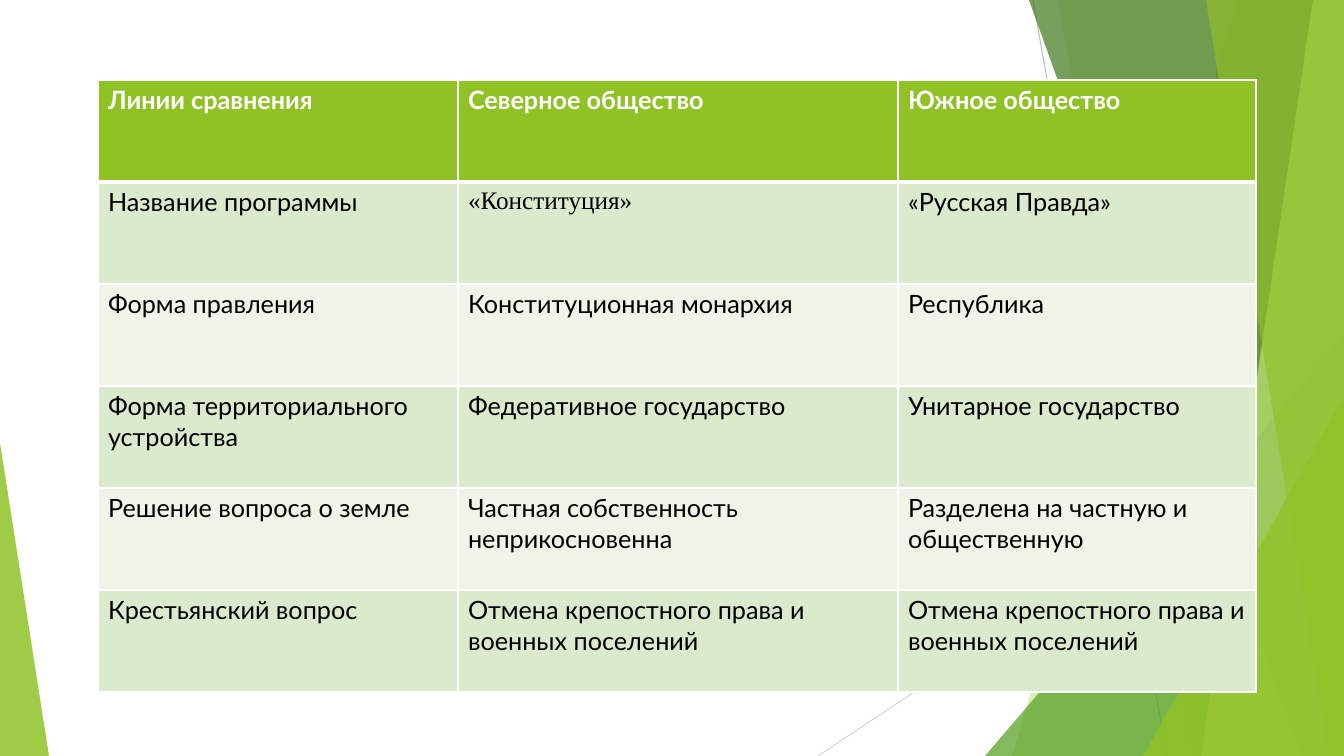
from dataclasses import dataclass

from lxml import etree
from pptx import Presentation
from pptx.dml.color import RGBColor
from pptx.enum.shapes import MSO_CONNECTOR, MSO_SHAPE
from pptx.oxml.ns import qn
from pptx.util import Emu, Pt

STRAIGHT = MSO_CONNECTOR.STRAIGHT
TRIANGLE = MSO_SHAPE.ISOSCELES_TRIANGLE
EMU_PER_INCH, PX_PER_INCH = 914400, 100.8
SLIDE_WIDTH, SLIDE_HEIGHT = 1344, 756

COLORS = {
    "white": "FFFFFF",
    "black": "000000",
    "gray": "BFBFBF",
    "light gray": "D9D9D9",
    "lime": "90C226",
    "pale lime": "C0E474",
    "green": "54A021",
    "dark green": "3F7819",
    "odd row": "DBE9CD",
    "even row": "EEF4E8",
}
BODY_FONT, SERIF_FONT = "Lato", "Times New Roman"


@dataclass
class Line:
    x1: int
    y1: int
    x2: int
    y2: int
    color: str


@dataclass
class Band:
    """Area from a slanted left edge to the right side of the slide."""
    top_x: int
    bottom_x: int
    color: str
    opacity: int


@dataclass
class Wedge:
    """Triangle standing on the bottom of the slide."""
    left: int
    top: int
    width: int
    apex: float
    color: str
    opacity: int


LINES = [
    Line(1033, 0, 1167, 756, "gray"),
    Line(1344, 406, 818, 756, "light gray"),
]
FACETS = [
    Band(1238, 1012, "lime", 30),
    Band(1058, 1192, "lime", 20),
    Wedge(985, 336, 359, 1.0, "green", 72),
    Band(1029, 1301, "dark green", 70),
    Band(1313, 1201, "pale lime", 70),
    Band(1206, 1329, "lime", 65),
    Wedge(1143, 396, 201, 1.0, "lime", 80),
    Wedge(0, 443, 49, 0.0, "lime", 85),
]

TABLE_LEFT, TABLE_TOP = 98, 80
COLUMN_WIDTHS = [360, 440, 358]
ROW_HEIGHT = 102
SERIF_TEXT = "«Конституция»"
ROWS = [
    ["Линии сравнения", "Северное общество", "Южное общество"],
    ["Название программы", SERIF_TEXT, "«Русская Правда»"],
    ["Форма правления", "Конституционная монархия", "Республика"],
    ["Форма территориального устройства", "Федеративное государство",
     "Унитарное государство"],
    ["Решение вопроса о земле", "Частная собственность неприкосновенна",
     "Разделена на частную и общественную"],
    ["Крестьянский вопрос", "Отмена крепостного права и военных поселений",
     "Отмена крепостного права и военных поселений"],
]


def px(length: int) -> Emu:
    return Emu(round(length * EMU_PER_INCH / PX_PER_INCH))


def rgb(name: str) -> RGBColor:
    return RGBColor.from_string(COLORS[name])


def draw_line(slide, line: Line) -> None:
    connector = slide.shapes.add_connector(
        STRAIGHT, px(line.x1), px(line.y1), px(line.x2), px(line.y2))
    connector.line.color.rgb = rgb(line.color)
    connector.line.width = Pt(0.75)
    etree.SubElement(connector.element.spPr, qn("a:effectLst"))


def add_band(slide, band: Band):
    builder = slide.shapes.build_freeform(px(band.top_x), 0)
    corners = [(SLIDE_WIDTH, 0), (SLIDE_WIDTH, SLIDE_HEIGHT),
               (band.bottom_x, SLIDE_HEIGHT)]
    builder.add_line_segments([(px(x), px(y)) for x, y in corners], close=True)
    return builder.convert_to_shape()


def add_wedge(slide, wedge: Wedge):
    shape = slide.shapes.add_shape(
        TRIANGLE, px(wedge.left), px(wedge.top),
        px(wedge.width), px(SLIDE_HEIGHT - wedge.top))
    shape.adjustments[0] = wedge.apex
    return shape


def draw_facet(slide, facet: Band | Wedge) -> None:
    add = add_band if isinstance(facet, Band) else add_wedge
    shape = add(slide, facet)
    shape.shadow.inherit = False
    shape.line.fill.background()
    shape.fill.solid()
    shape.fill.fore_color.rgb = rgb(facet.color)
    color = shape.element.spPr.find(qn("a:solidFill"))[0]
    etree.SubElement(color, qn("a:alpha"), val=str(facet.opacity * 1000))


def set_borders(cell, top: int, bottom: int) -> None:
    properties = cell._tc.get_or_add_tcPr()
    for side, width in (("L", 1), ("R", 1), ("T", top), ("B", bottom)):
        border = etree.SubElement(
            properties, qn(f"a:ln{side}"), w=str(Pt(width)))
        fill = etree.SubElement(border, qn("a:solidFill"))
        etree.SubElement(fill, qn("a:srgbClr"), val=COLORS["white"])


def fill_cell(cell, text: str, row: int) -> None:
    header = row == 0
    # The rule under the header is thicker than the others
    set_borders(cell, top=3 if row == 1 else 1, bottom=3 if header else 1)
    cell.fill.solid()
    cell.fill.fore_color.rgb = rgb(
        "lime" if header else "odd row" if row % 2 else "even row")
    run = cell.text_frame.paragraphs[0].add_run()
    run.text = text
    run.font.name = SERIF_FONT if text == SERIF_TEXT else BODY_FONT
    run.font.size = Pt(18)
    run.font.bold = header
    run.font.color.rgb = rgb("white" if header else "black")


def draw_table(slide) -> None:
    table = slide.shapes.add_table(
        len(ROWS), len(COLUMN_WIDTHS), px(TABLE_LEFT), px(TABLE_TOP),
        px(sum(COLUMN_WIDTHS)), px(ROW_HEIGHT * len(ROWS))).table
    for column, width in zip(table.columns, COLUMN_WIDTHS):
        column.width = px(width)
    for row, texts in enumerate(ROWS):
        table.rows[row].height = px(ROW_HEIGHT)
        for column, text in enumerate(texts):
            fill_cell(table.cell(row, column), text, row)


def main() -> None:
    presentation = Presentation()
    presentation.slide_width = px(SLIDE_WIDTH)
    presentation.slide_height = px(SLIDE_HEIGHT)
    slide = presentation.slides.add_slide(presentation.slide_layouts[6])

    # Background decoration, from back to front
    for line in LINES:
        draw_line(slide, line)
    for facet in FACETS:
        draw_facet(slide, facet)

    # Comparison of the two societies
    draw_table(slide)
    presentation.save("out.pptx")


if __name__ == "__main__":
    main()
